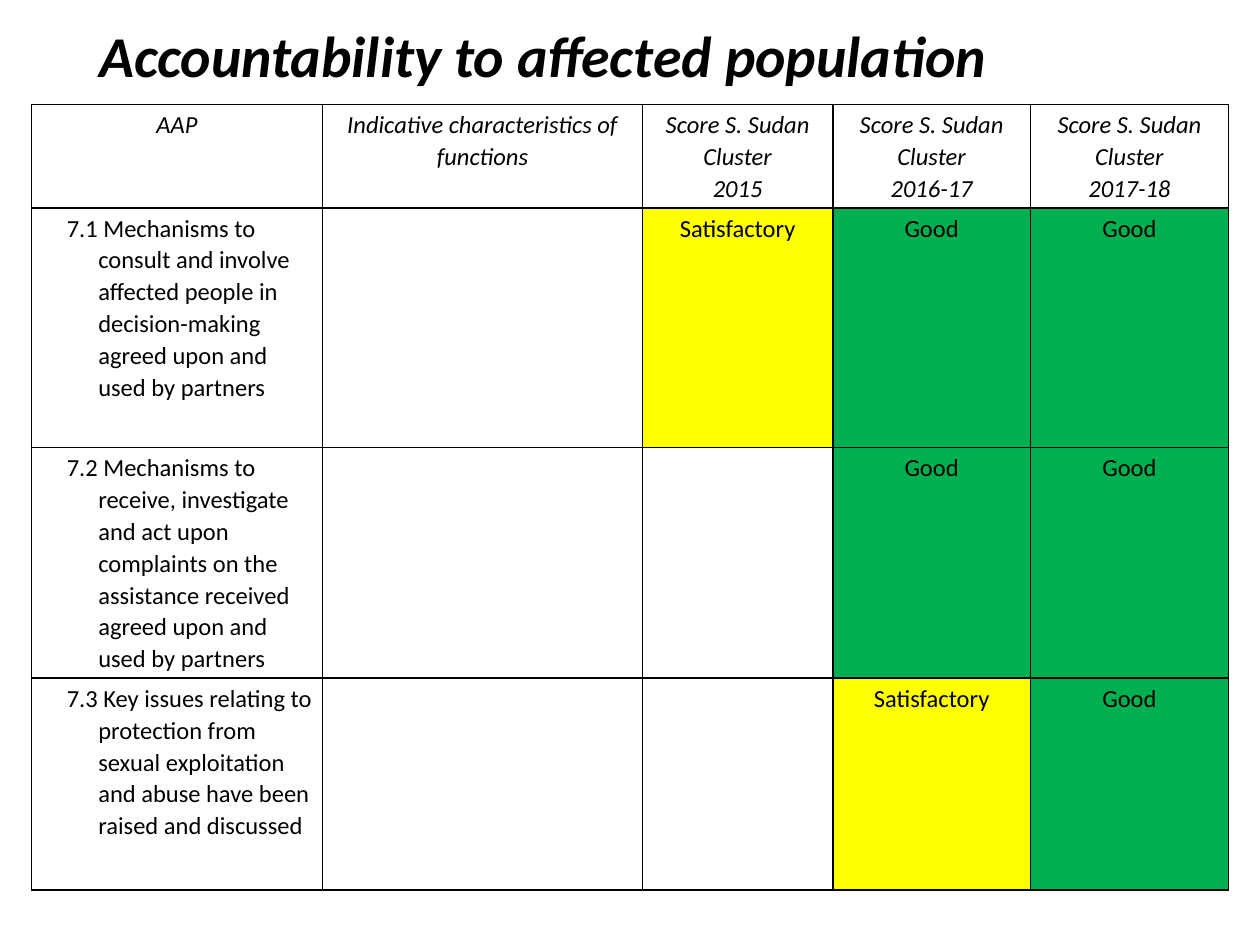
import pptx
import pptx.util
import pptx.dml.color
import pptx.enum.text
import pptx.oxml.ns
import lxml.etree

Inches = pptx.util.Inches
Pt = pptx.util.Pt
ALIGN = pptx.enum.text.PP_ALIGN
COLORS = {"text": "000000", "border": "000000", "Satisfactory": "FFFF00", "Good": "00B050"}
COLUMN_WIDTHS = [2.31, 2.54, 1.51, 1.57, 1.57]
ROW_HEIGHTS = [0.74, 1.9, 1.43, 1.68]
HEADERS = ["AAP", "Indicative characteristics of functions"] + [
    f"Score S. Sudan Cluster\n{period}" for period in ("2015", "2016-17", "2017-18")
]
CRITERIA = [
    ["7.1 Mechanisms to consult and involve affected people in decision-making "
     "agreed upon and used by partners", "", "Satisfactory", "Good", "Good"],
    ["7.2 Mechanisms to receive, investigate and act upon complaints on the "
     "assistance received agreed upon and used by partners", "", "", "Good", "Good"],
    ["7.3 Key issues relating to protection from sexual exploitation and abuse "
     "have been raised and discussed", "", "", "Satisfactory", "Good"],
]
TITLE_FONT = {"name": "Calibri", "size": Pt(33), "bold": True, "italic": True}
HEADER_FONT = {"name": "Calibri", "size": Pt(14), "bold": False, "italic": True}
BODY_FONT = {**HEADER_FONT, "italic": False}
CELL_MARGINS = {f"margin_{side}": Inches(0.03) for side in ("left", "right", "top", "bottom")}


def rgb(name):
    return pptx.dml.color.RGBColor.from_string(COLORS[name])


def apply_format(target, values):
    for name, value in values.items():
        setattr(target, name, value)


def write_text(text_frame, text, font, alignment, line_spacing):
    text_frame.text = text
    for paragraph in text_frame.paragraphs:
        apply_format(paragraph, {"alignment": alignment, "line_spacing": line_spacing})
        for run in paragraph.runs:
            apply_format(run.font, font)
            run.font.color.rgb = rgb("text")


def add_title(slide, text):
    title = slide.shapes.title
    apply_format(title, {"left": Inches(0.69), "top": Inches(0),
                         "width": Inches(8.62), "height": Inches(0.93)})
    apply_format(title.text_frame, {"word_wrap": True,
                                    "auto_size": pptx.enum.text.MSO_AUTO_SIZE.NONE,
                                    "vertical_anchor": pptx.enum.text.MSO_ANCHOR.MIDDLE})
    write_text(title.text_frame, text, TITLE_FONT, ALIGN.LEFT, 0.9)


def set_borders(cell):
    qn = pptx.oxml.ns.qn
    properties = cell._tc.get_or_add_tcPr()
    for tag in ("a:lnL", "a:lnR", "a:lnT", "a:lnB"):
        line = lxml.etree.SubElement(properties, qn(tag), w=str(Pt(1)))
        fill = lxml.etree.SubElement(line, qn("a:solidFill"))
        lxml.etree.SubElement(fill, qn("a:srgbClr"), val=COLORS["border"])


def set_hanging_indent(paragraph, left, first_line):
    properties = paragraph._p.get_or_add_pPr()
    properties.set("marL", str(Inches(left)))
    properties.set("indent", str(Inches(first_line)))


def format_cell(cell, text, is_header, is_criterion):
    apply_format(cell, CELL_MARGINS)
    set_borders(cell)
    if text in ("Satisfactory", "Good"):
        cell.fill.solid()
        cell.fill.fore_color.rgb = rgb(text)
    else:
        cell.fill.background()
    if text:
        write_text(cell.text_frame, text, HEADER_FONT if is_header else BODY_FONT,
                   ALIGN.LEFT if is_criterion else ALIGN.CENTER, 1.07)
    if is_criterion:
        set_hanging_indent(cell.text_frame.paragraphs[0], 0.5, -0.25)


def add_score_table(slide):
    rows = [HEADERS] + CRITERIA
    table = slide.shapes.add_table(len(rows), len(HEADERS), Inches(0.25), Inches(0.83),
                                   Inches(9.5), Inches(6.18)).table
    apply_format(table, {"first_row": False, "horz_banding": False})
    for column, width in zip(table.columns, COLUMN_WIDTHS):
        column.width = Inches(width)
    for row, height in zip(table.rows, ROW_HEIGHTS):
        row.height = Inches(height)
    for row_index, texts in enumerate(rows):
        for column_index, text in enumerate(texts):
            is_header = row_index == 0
            format_cell(table.cell(row_index, column_index), text, is_header,
                        column_index == 0 and not is_header)


def main():
    presentation = pptx.Presentation()
    apply_format(presentation, {"slide_width": Inches(10), "slide_height": Inches(7.5)})
    slide = presentation.slides.add_slide(presentation.slide_layouts[5])
    add_title(slide, "Accountability to affected population")
    add_score_table(slide)
    presentation.save("out.pptx")


if __name__ == "__main__":
    main()
